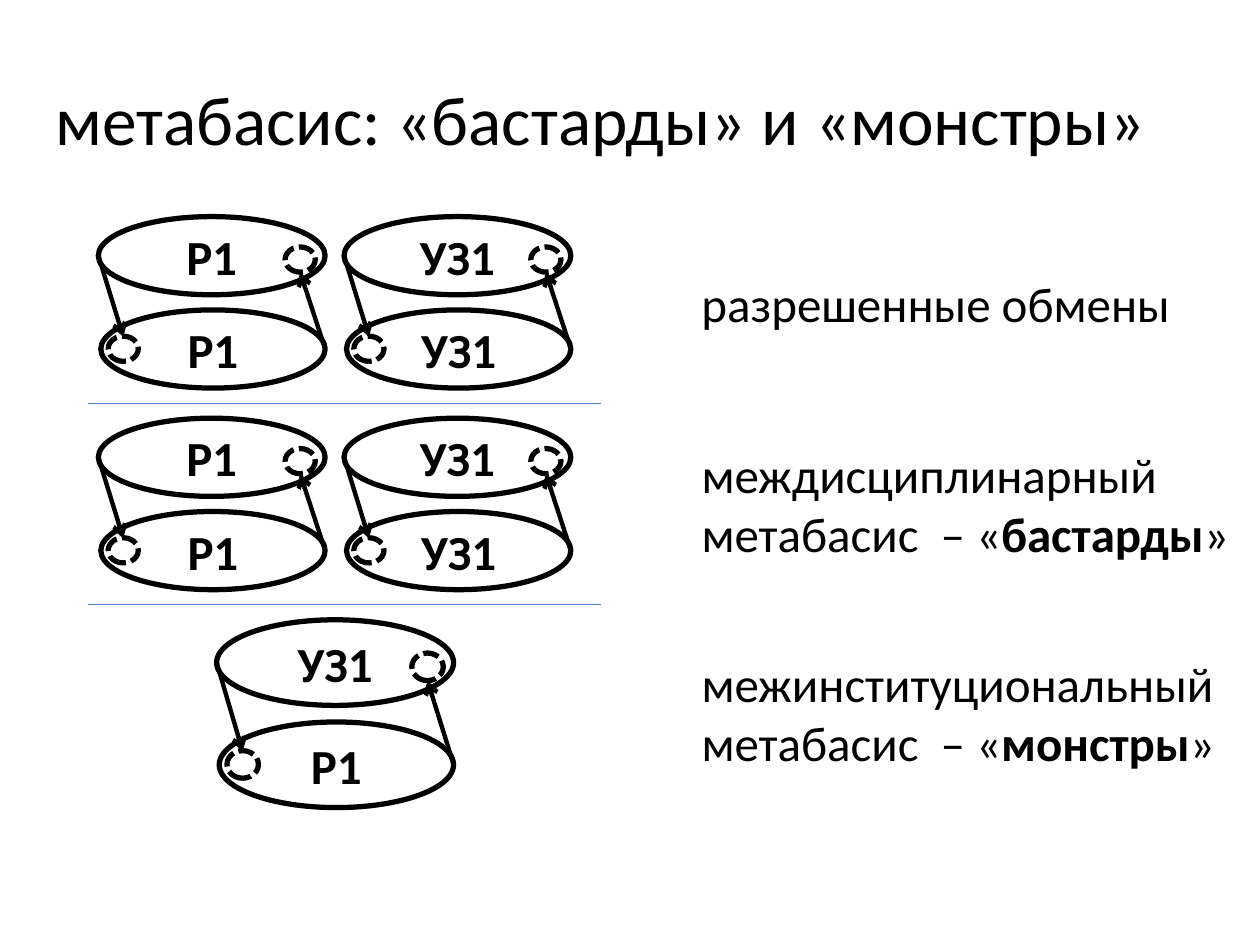
from lxml.etree import SubElement
from pptx import Presentation
from pptx.dml.color import RGBColor
from pptx.enum.dml import MSO_LINE
from pptx.enum.shapes import MSO_CONNECTOR, MSO_SHAPE
from pptx.enum.text import MSO_ANCHOR, MSO_AUTO_SIZE, PP_ALIGN
from pptx.oxml.ns import qn
from pptx.util import Pt

BLACK = RGBColor(0x00, 0x00, 0x00)
BLUE = RGBColor(0x4B, 0x7E, 0xBC)

TITLE = "метабасис: «бастарды» и «монстры»"
SMALL, LARGE = (129.6, 98), (135.4, 107.3)
PAIR = [(56.2, "Р1", "Р1"), (196.6, "УЗ1", "УЗ1")]
ROWS = [
    {"drums": PAIR, "size": SMALL, "caption": ["разрешенные обмены"],
     "box": (152.6, 332, 41)},
    {"drums": PAIR, "size": SMALL,
     "caption": ["междисциплинарный метабасис  – «", "бастарды", "»"],
     "box": (250.6, 326, 75)},
    {"drums": [(123.8, "УЗ1", "Р1")], "size": LARGE,
     "caption": ["межинституциональный метабасис  – «", "монстры", "»"],
     "box": (370.1, 363.6, 75)},
]
FIRST_TOP, ROW_PITCH = 123.8, 115.2
CAPTION_LEFT = 393.8
DIVIDER_LEFT, DIVIDER_RIGHT, DIVIDER_GAP = 50.4, 343.4, 8.6

DISC_HEIGHT, LOWER_TOP, LOWER_INSET = 0.456, 0.544, 0.011
SPOTS = [(0.11, 0.77), (0.89, 0.25)]
SPOT_WIDTH, SPOT_HEIGHT = 0.133, 0.147
ARROWS = [((0, 0.228), (0.11, 0.7)), ((1, 0.77), (0.89, 0.325))]


def write(paragraph, text, size, bold=False):
    run = paragraph.add_run()
    run.text = text
    run.font.color.rgb = BLACK
    for key, value in {"name": "Calibri", "size": Pt(size), "bold": bold}.items():
        setattr(run.font, key, value)


def add_ellipse(shapes, left, top, width, height):
    ellipse = shapes.add_shape(MSO_SHAPE.OVAL, Pt(left), Pt(top), Pt(width), Pt(height))
    ellipse.shadow.inherit = False
    ellipse.fill.background()
    ellipse.line.color.rgb = BLACK
    ellipse.line.width = Pt(3)
    return ellipse


def add_line(shapes, start, end, color, width, arrow=False):
    line = shapes.add_connector(MSO_CONNECTOR.STRAIGHT, *map(Pt, start + end))
    line.line.color.rgb = color
    line.line.width = Pt(width)
    if arrow:
        SubElement(line.line._get_or_add_ln(), qn("a:tailEnd"), type="arrow")
    SubElement(line._element.spPr, qn("a:effectLst"))


def add_drum(shapes, left, top, size, upper, lower):
    width, height = size

    def at(point):
        return left + point[0] * width, top + point[1] * height

    for label, inset, drop in [(lower, LOWER_INSET, LOWER_TOP), (upper, 0, 0)]:
        disc = add_ellipse(shapes, *at((inset, drop)),
                           (1 - inset) * width, DISC_HEIGHT * height)
        disc.text_frame.vertical_anchor = MSO_ANCHOR.MIDDLE
        paragraph = disc.text_frame.paragraphs[0]
        paragraph.alignment = PP_ALIGN.CENTER
        write(paragraph, label, 28, True)
    for center in SPOTS:
        x, y = at(center)
        across, along = SPOT_HEIGHT * height, SPOT_WIDTH * width
        spot = add_ellipse(shapes, x - across / 2, y - along / 2, across, along)
        spot.rotation = 270
        spot.line.dash_style = MSO_LINE.SQUARE_DOT
    for start, end in ARROWS:
        add_line(shapes, at(start), at(end), BLACK, 2.5, arrow=True)


def add_caption(shapes, parts, top, width, height):
    caption = shapes.add_textbox(Pt(CAPTION_LEFT), Pt(top), Pt(width), Pt(height))
    frame = caption.text_frame
    frame.word_wrap = True
    frame.auto_size = MSO_AUTO_SIZE.SHAPE_TO_FIT_TEXT
    for index, part in enumerate(parts):
        write(frame.paragraphs[0], part, 28, index == 1)


def main():
    deck = Presentation()
    deck.slide_width, deck.slide_height = Pt(720), Pt(540)
    slide = deck.slides.add_slide(deck.slide_layouts[5])
    shapes = slide.shapes

    title = shapes.title
    place = {"left": 0, "top": 22.3, "width": 686.2, "height": 90}
    for key, value in place.items():
        setattr(title, key, Pt(value))
    title.text_frame.vertical_anchor = MSO_ANCHOR.MIDDLE
    heading = title.text_frame.paragraphs[0]
    heading.alignment = PP_ALIGN.CENTER
    write(heading, TITLE, 39.6)

    for index, row in enumerate(ROWS):
        top = FIRST_TOP + index * ROW_PITCH
        if index:
            y = top - DIVIDER_GAP
            add_line(shapes, (DIVIDER_LEFT, y), (DIVIDER_RIGHT, y), BLUE, 0.75)
        for left, upper, lower in row["drums"]:
            add_drum(shapes, left, top, row["size"], upper, lower)
        add_caption(shapes, row["caption"], *row["box"])

    deck.save("out.pptx")


if __name__ == "__main__":
    main()
